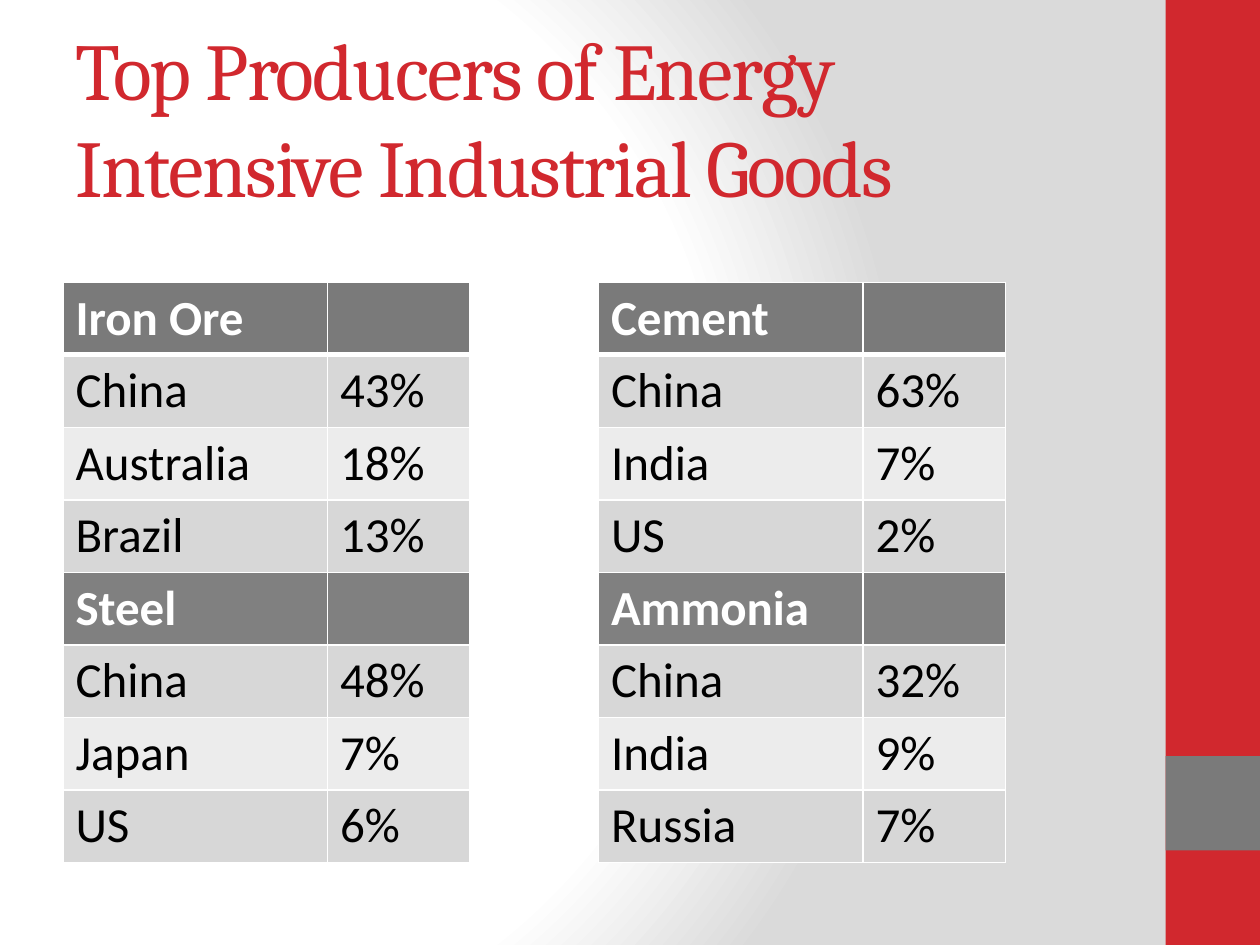
from lxml import etree
from pptx import Presentation
from pptx import util as u
from pptx.dml.color import RGBColor
from pptx.enum import shapes, text
from pptx.oxml import parse_xml
from pptx.oxml.ns import nsdecls, qn

WIDTH, HEIGHT = u.Inches(10), u.Inches(7.5)

RED = RGBColor(0xD1, 0x28, 0x2E)
GREY = RGBColor(0x7A, 0x7A, 0x7A)
MID_GREY = RGBColor(0x80, 0x80, 0x80)
BAND_DARK = RGBColor(0xD7, 0xD7, 0xD7)
BAND_LIGHT = RGBColor(0xEC, 0xEC, 0xEC)
BACKDROP = RGBColor(0xDA, 0xDA, 0xDA)
WHITE = RGBColor(0xFF, 0xFF, 0xFF)
BLACK = RGBColor(0, 0, 0)

COLUMN_WIDTHS = (2.1, 1.13)
ROW_HEIGHT = 0.57
TABLE_TOP = 2.24
TABLE_LEFTS = (0.5, 4.75)

# Each table stacks two goods, each with its leading producers
GOODS = (
    (
        ("Iron Ore", (("China", "43%"), ("Australia", "18%"), ("Brazil", "13%"))),
        ("Steel", (("China", "48%"), ("Japan", "7%"), ("US", "6%"))),
    ),
    (
        ("Cement", (("China", "63%"), ("India", "7%"), ("US", "2%"))),
        ("Ammonia", (("China", "32%"), ("India", "9%"), ("Russia", "7%"))),
    ),
)


def set_backdrop(slide):
    """Circular gradient, white on the left and grey on the right."""
    slide.background.fill.solid()
    solid = next(slide.background._cSld.iter(qn("a:solidFill")))
    stops = "".join(
        f'<a:gs pos="{share * 1000}"><a:srgbClr val="{color}"/></a:gs>'
        for share, color in ((0, WHITE), (75, WHITE), (100, BACKDROP))
    )
    gradient = parse_xml(
        f'<a:gradFill {nsdecls("a")} rotWithShape="1"><a:gsLst>{stops}</a:gsLst>'
        '<a:path path="circle"><a:fillToRect l="20000" t="50000" r="100000" b="50000"/>'
        "</a:path></a:gradFill>"
    )
    solid.getparent().replace(solid, gradient)


def add_bar(slide, top, height, color):
    """Block in the right-hand strip; top and height are shares of the slide."""
    bar = slide.shapes.add_shape(
        shapes.MSO_SHAPE.RECTANGLE,
        int(WIDTH * 0.925), int(HEIGHT * top), int(WIDTH * 0.075), int(HEIGHT * height),
    )
    bar.shadow.inherit = False
    bar.fill.solid()
    bar.fill.fore_color.rgb = color
    bar.line.fill.background()


def add_run(paragraph, words, font, size, color, bold=False):
    run = paragraph.add_run()
    run.text = words
    run.font.name = font
    run.font.size = u.Pt(size)
    run.font.bold = bold
    run.font.color.rgb = color
    return run


def set_title(slide, words):
    title = slide.shapes.title
    title.left, title.top = u.Inches(0.5), u.Inches(0.3)
    title.width, title.height = u.Inches(8.33), u.Inches(1.25)
    frame = title.text_frame
    frame.word_wrap = True
    frame.auto_size = text.MSO_AUTO_SIZE.NONE
    frame.vertical_anchor = text.MSO_ANCHOR.MIDDLE
    heading = frame.paragraphs[0]
    heading.alignment = text.PP_ALIGN.LEFT
    run = add_run(heading, words, "Cambria", 46, RED)
    run.font._element.set("spc", "-100")


def set_borders(cell, top=1, bottom=1):
    """White cell borders, widths in points."""
    properties = cell._tc.get_or_add_tcPr()
    for side, width in (("L", 1), ("R", 1), ("T", top), ("B", bottom)):
        line = etree.SubElement(properties, qn(f"a:ln{side}"), w=str(u.Pt(width)))
        fill = etree.SubElement(line, qn("a:solidFill"))
        etree.SubElement(fill, qn("a:srgbClr"), val=str(WHITE))


def style_cell(cell, words, fill, color, bold, top, bottom):
    set_borders(cell, top, bottom)
    cell.fill.solid()
    cell.fill.fore_color.rgb = fill
    if words:
        add_run(cell.text_frame.paragraphs[0], words, "Calibri", 28, color, bold)


def table_rows(goods):
    """Yield label, share, fill and whether the row is a heading."""
    for heading_fill, (good, producers) in zip((GREY, MID_GREY), goods):
        yield good, "", heading_fill, True
        for place, (country, share) in enumerate(producers):
            yield country, share, (BAND_DARK, BAND_LIGHT)[place % 2], False


def add_producer_table(slide, left, goods):
    rows = list(table_rows(goods))
    table = slide.shapes.add_table(
        len(rows), len(COLUMN_WIDTHS), u.Inches(left), u.Inches(TABLE_TOP),
        u.Inches(sum(COLUMN_WIDTHS)), u.Inches(ROW_HEIGHT * len(rows)),
    ).table
    for column, width in zip(table.columns, COLUMN_WIDTHS):
        column.width = u.Inches(width)
    for row, (label, share, fill, heading) in enumerate(rows):
        table.rows[row].height = u.Inches(ROW_HEIGHT)
        # A thicker rule separates the first row from the rest
        top, bottom = 3 if row == 1 else 1, 3 if row == 0 else 1
        for column, words in enumerate((label, share)):
            style_cell(table.cell(row, column), words, fill,
                       WHITE if heading else BLACK, heading, top, bottom)


def main():
    deck = Presentation()
    deck.slide_width, deck.slide_height = WIDTH, HEIGHT
    slide = deck.slides.add_slide(deck.slide_layouts[5])

    # Backdrop and right-hand strip
    set_backdrop(slide)
    add_bar(slide, 0, 1, RED)
    add_bar(slide, 0.8, 0.1, GREY)

    # Title and the two tables
    set_title(slide, "Top Producers of Energy Intensive Industrial Goods")
    for left, goods in zip(TABLE_LEFTS, GOODS):
        add_producer_table(slide, left, goods)

    deck.save("out.pptx")


if __name__ == "__main__":
    main()
